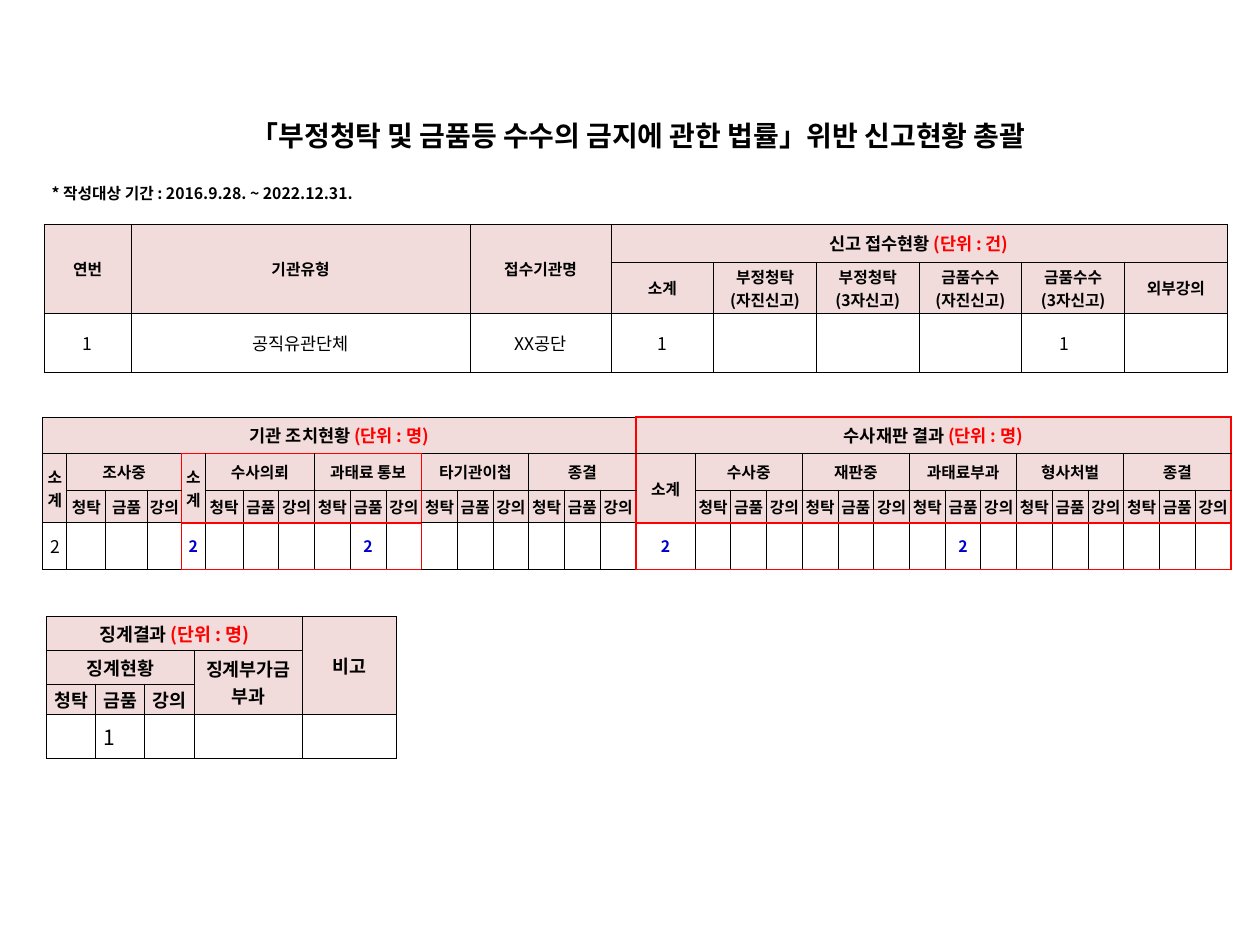
from dataclasses import dataclass

from lxml import etree
from pptx import Presentation
from pptx.dml.color import RGBColor
from pptx.enum.text import MSO_ANCHOR, PP_ALIGN
from pptx.oxml.ns import qn
from pptx.util import Inches, Pt

MIDDLE = MSO_ANCHOR.MIDDLE
CENTER, LEFT = PP_ALIGN.CENTER, PP_ALIGN.LEFT


@dataclass(frozen=True)
class TextStyle:
    size: float
    bold: bool = True
    color: str = "000000"
    align: PP_ALIGN = CENTER
    fill: str = ""


class Theme:
    font = "Noto Sans CJK KR"
    black, red, blue, pink = "000000", "FF0000", "0000CC", "F2DCDB"
    thin, thick = 0.5, 1
    title = TextStyle(16)
    note = TextStyle(9, align=LEFT)
    head = TextStyle(9, fill=pink)
    group = TextStyle(10, fill=pink)
    discipline = TextStyle(10.5, fill=pink)
    body = TextStyle(10, bold=False)
    large = TextStyle(12, bold=False)
    count = TextStyle(9, color=blue)


@dataclass
class Cell:
    row: int
    col: int
    text: str
    style: TextStyle = Theme.head
    rows: int = 1
    cols: int = 1


@dataclass
class Frame:
    top: int
    left: int
    bottom: int
    right: int
    sides: str
    width: float


class Deck:
    def __init__(self, theme):
        self.theme = theme
        self.prs = Presentation()
        self.prs.slide_width, self.prs.slide_height = Inches(10), Inches(7.5)
        self.s = self.prs.slides.add_slide(self.prs.slide_layouts[6])

    def text(self, cell, text, style):
        cell.vertical_anchor = MIDDLE
        cell.margin_left = cell.margin_right = 0
        cell.margin_top = cell.margin_bottom = 0
        main, _, unit = text.partition("|")
        tf = cell.text_frame
        tf.text = main
        for p in tf.paragraphs:
            p.alignment = style.align
            f = p.font
            f.name, f.size, f.bold = self.theme.font, Pt(style.size), style.bold
            f.color.rgb = RGBColor.from_string(style.color)
            ea = etree.SubElement(p._p.pPr.find(qn("a:defRPr")), qn("a:ea"))
            ea.set("typeface", self.theme.font)
        if unit:
            r = tf.paragraphs[0].add_run()
            r.text = unit
            r.font.color.rgb = RGBColor.from_string(self.theme.red)

    def borders(self, cell, lines):
        tc_pr = cell._tc.get_or_add_tcPr()
        for i, side in enumerate("LRTB"):
            color, width = lines[side]
            ln = etree.Element(qn(f"a:ln{side}"), w=str(Pt(width)))
            fill = etree.SubElement(ln, qn("a:solidFill"))
            etree.SubElement(fill, qn("a:srgbClr"), val=color)
            tc_pr.insert(i, ln)

    def lines(self, c, frames):
        lines = dict.fromkeys("LRTB", (self.theme.black, self.theme.thin))
        bottom, right = c.row + c.rows - 1, c.col + c.cols - 1
        for f in frames:
            if not (f.top <= c.row <= f.bottom and f.left <= c.col <= f.right):
                continue
            touching = {"L": c.col == f.left, "R": right == f.right,
                        "T": c.row == f.top, "B": bottom == f.bottom}
            for side in f.sides:
                if touching[side]:
                    lines[side] = (self.theme.red, f.width)
        return lines

    def table(self, x, y, cols, rows, cells, frames=(), ruled=True):
        shape = self.s.shapes.add_table(len(rows), len(cols), Inches(x), Inches(y),
                                        Inches(sum(cols)), Inches(sum(rows)))
        tbl = shape.table
        tbl.first_row = tbl.horz_banding = False
        for col, width in zip(tbl.columns, cols):
            col.width = Inches(width)
        for row, height in zip(tbl.rows, rows):
            row.height = Inches(height)
        used = {(r, k) for c in cells for r in range(c.row, c.row + c.rows)
                for k in range(c.col, c.col + c.cols)}
        blanks = [Cell(r, k, "", self.theme.body) for r in range(len(rows))
                  for k in range(len(cols)) if (r, k) not in used]
        for c in cells + blanks:
            last = tbl.cell(c.row + c.rows - 1, c.col + c.cols - 1)
            origin = tbl.cell(c.row, c.col)
            if c.rows * c.cols > 1:
                origin.merge(last)
            self.text(origin, c.text, c.style)
            for r in range(c.row, c.row + c.rows):
                for k in range(c.col, c.col + c.cols):
                    cell = tbl.cell(r, k)
                    if c.style.fill:
                        cell.fill.solid()
                        cell.fill.fore_color.rgb = RGBColor.from_string(c.style.fill)
                    else:
                        cell.fill.background()
                    if ruled:
                        self.borders(cell, self.lines(c, frames))


def row_of(row, texts, style=Theme.head, start=0):
    return [Cell(row, start + i, t, style) for i, t in enumerate(texts) if t]


def add_title(deck):
    deck.table(0.41, 0.74, [9.31], [0.65, 0.28], [
        Cell(0, 0, "「부정청탁 및 금품등 수수의 금지에 관한 법률」위반 신고현황 총괄", Theme.title),
        Cell(1, 0, "* 작성대상 기간 : 2016.9.28. ~ 2022.12.31.", Theme.note),
    ], ruled=False)


def add_reports(deck):
    fixed = [0.69, 2.69, 1.12]
    cols = fixed + [(9.39 - sum(fixed)) / 6] * 6
    cells = [Cell(0, i, t, rows=2) for i, t in enumerate(["연번", "기관유형", "접수기관명"])]
    cells.append(Cell(0, 3, "신고 접수현황 |(단위 : 건)", Theme.group, cols=6))
    cells += row_of(1, ["소계", "부정청탁\v(자진신고)", "부정청탁\v(3자신고)",
                        "금품수수\v(자진신고)", "금품수수\v(3자신고)", "외부강의"], start=3)
    cells += row_of(2, ["1", "공직유관단체", "XX공단", "1", "", "", "", "1　"], Theme.body)
    deck.table(0.35, 1.78, cols, [0.3, 0.41, 0.47], cells)


def add_actions(deck, kinds):
    lead, total = [0.19, 0.31, 0.33, 0.27, 0.19, 0.3], 0.47
    unit = (9.44 - sum(lead) - total) / 26
    cols = lead + [unit] * 11 + [total] + [unit] * 15
    cells = [Cell(0, 0, "기관 조치현황 |(단위 : 명)", Theme.group, cols=17),
             Cell(0, 17, "수사재판 결과 |(단위 : 명)", Theme.group, cols=16)]
    cells += [Cell(1, k, t, rows=2) for k, t in [(0, "소\n계"), (4, "소\n계"), (17, "소계")]]
    groups = {1: ["조사중"],
              5: ["수사의뢰", "과태료 통보", "타기관이첩", "종결"],
              18: ["수사중", "재판중", "과태료부과", "형사처벌", "종결"]}
    for start, names in groups.items():
        for i, name in enumerate(names):
            k = start + 3 * i
            cells.append(Cell(1, k, name, cols=3))
            cells += row_of(2, kinds, start=k)
    cells.append(Cell(3, 0, "2", Theme.body))
    cells += [Cell(3, k, "2", Theme.count) for k in (4, 9, 17, 25)]
    thin, thick = Theme.thin, Theme.thick
    frames = [
        Frame(0, 0, 3, 16, "R", thick),
        Frame(0, 17, 0, 32, "LTR", thick),
        Frame(1, 17, 2, 32, "LRB", thick),
        Frame(3, 17, 3, 32, "LTRB", thick),
        Frame(1, 1, 3, 3, "R", thin),
        Frame(1, 4, 2, 10, "LTR", thin),
        Frame(1, 4, 2, 10, "B", thick),
        Frame(3, 4, 3, 10, "LRB", thin),
        Frame(3, 4, 3, 10, "T", thick),
        Frame(1, 11, 3, 13, "L", thin),
    ]
    deck.table(0.34, 3.31, cols, [0.29, 0.29, 0.26, 0.37], cells, frames)


def add_discipline(deck, kinds):
    style = Theme.discipline
    cells = [Cell(0, 0, "징계결과 |(단위 : 명)", style, cols=4),
             Cell(0, 4, "비고", style, rows=3),
             Cell(1, 0, "징계현황", style, cols=3),
             Cell(1, 3, "징계부가금\v부과", style, rows=2)]
    cells += row_of(2, kinds, style)
    cells.append(Cell(3, 1, "1　", Theme.large))
    deck.table(0.37, 4.89, [0.39] * 3 + [0.86, 0.75], [0.27, 0.27, 0.24, 0.35], cells)


def main():
    deck = Deck(Theme)
    kinds = ["청탁", "금품", "강의"]
    add_title(deck)
    add_reports(deck)
    add_actions(deck, kinds)
    add_discipline(deck, kinds)
    deck.prs.save("out.pptx")


if __name__ == "__main__":
    main()
